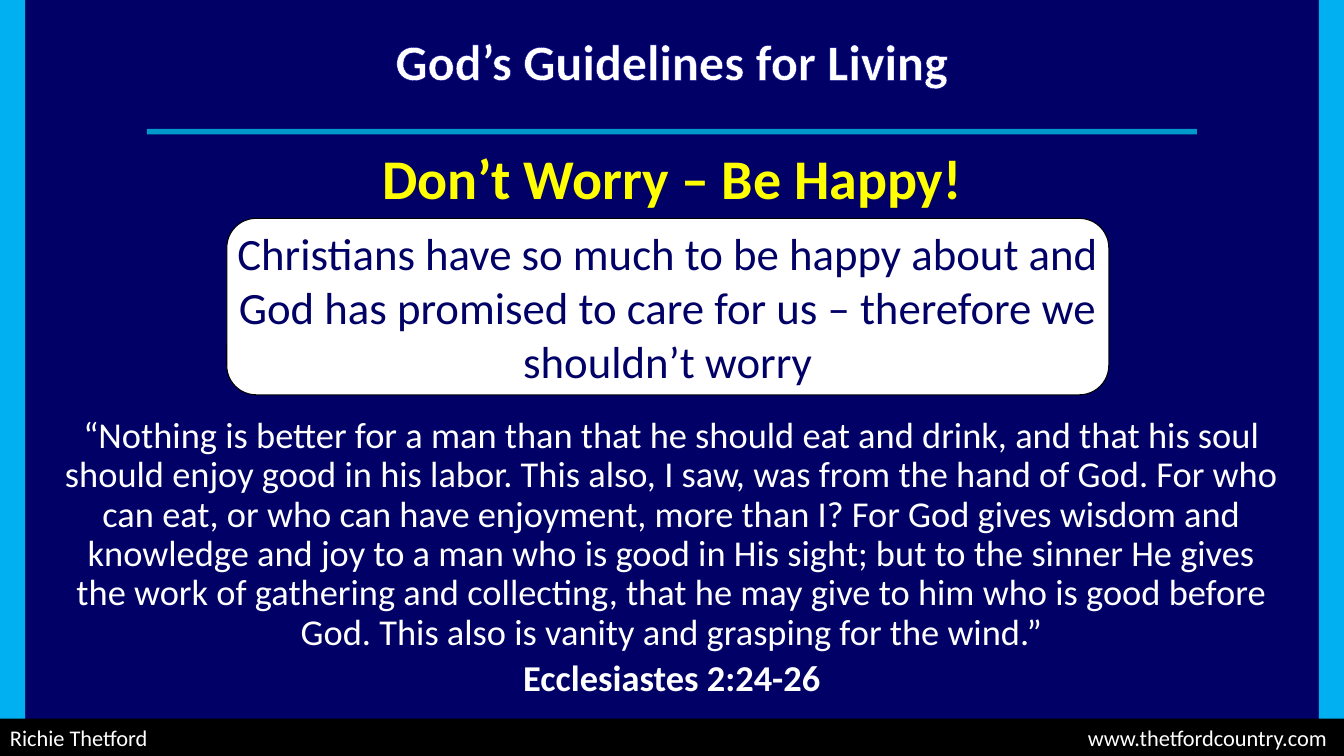
from dataclasses import dataclass

import lxml.etree
import pptx
import pptx.dml.color
import pptx.enum.shapes
import pptx.enum.text
import pptx.oxml.ns
import pptx.util

Pt = pptx.util.Pt
Align = pptx.enum.text.PP_ALIGN
Anchor = pptx.enum.text.MSO_ANCHOR
Preset = pptx.enum.shapes.MSO_SHAPE
qn = pptx.oxml.ns.qn


@dataclass(frozen=True)
class Theme:
    font: str = "Calibri"
    navy: str = "000066"
    outline: str = "000099"
    sky: str = "00B0F0"
    rule: str = "0099CC"
    yellow: str = "FFFF00"
    white: str = "FFFFFF"
    black: str = "000000"
    heading: float = 36
    topic: float = 40
    message: float = 32
    verse: float = 26
    footer: float = 16


@dataclass(frozen=True)
class Box:
    left: float
    top: float
    width: float
    height: float

    def lengths(self) -> tuple:
        return Pt(self.left), Pt(self.top), Pt(self.width), Pt(self.height)


@dataclass(frozen=True)
class Panel:
    box: Box
    fill: str


THEME = Theme()
WIDTH, HEIGHT = 960, 540
SIDE = 18
FOOTER_HEIGHT = 26.6
FOOTER_TAB = 940.8


def rgb(value: str) -> pptx.dml.color.RGBColor:
    return pptx.dml.color.RGBColor.from_string(value)


def add_panel(slide, panel: Panel, preset=Preset.RECTANGLE, line: str = ""):
    shape = slide.shapes.add_shape(preset, *panel.box.lengths())
    shape.shadow.inherit = False
    shape.fill.solid()
    shape.fill.fore_color.rgb = rgb(panel.fill)
    if line:
        shape.line.color.rgb = rgb(line)
        shape.line.width = Pt(0.75)
    else:
        shape.line.fill.background()
    return shape


def add_frame(slide, box: Box):
    return slide.shapes.add_textbox(*box.lengths()).text_frame


def write(frame, *texts: str, size: float, color: str, bold: tuple = (False,),
          align=Align.CENTER, anchor=Anchor.TOP, spacing: float = 1.0,
          gap: float = 0, outline: str = "", right_tab: float = 0) -> None:
    frame.word_wrap = True
    frame.vertical_anchor = anchor
    for index, text in enumerate(texts):
        paragraph = frame.add_paragraph() if index else frame.paragraphs[0]
        paragraph.alignment = align
        paragraph.line_spacing = spacing
        paragraph.space_before = Pt(gap if index else 0)
        if right_tab:
            stops = lxml.etree.SubElement(paragraph._p.get_or_add_pPr(), qn("a:tabLst"))
            lxml.etree.SubElement(stops, qn("a:tab"), pos=str(Pt(right_tab)), algn="r")
        run = paragraph.add_run()
        run.text = text
        run.font.name = THEME.font
        run.font.size = Pt(size)
        run.font.bold = bold[index]
        run.font.color.rgb = rgb(color)
        if outline:
            edge = lxml.etree.Element(qn("a:ln"), w=str(Pt(1)))
            fill = lxml.etree.SubElement(edge, qn("a:solidFill"))
            lxml.etree.SubElement(fill, qn("a:srgbClr"), val=outline)
            run._r.get_or_add_rPr().insert(0, edge)


def main() -> None:
    presentation = pptx.Presentation()
    presentation.slide_width, presentation.slide_height = Pt(WIDTH), Pt(HEIGHT)
    slide = presentation.slides.add_slide(presentation.slide_layouts[6])
    slide.background.fill.solid()
    slide.background.fill.fore_color.rgb = rgb(THEME.navy)

    for panel in (
        Panel(Box(0, 0, SIDE, HEIGHT), THEME.sky),
        Panel(Box(WIDTH - SIDE, 0, SIDE, HEIGHT), THEME.sky),
        Panel(Box(105, 92, 750, 4), THEME.rule),
    ):
        add_panel(slide, panel)

    write(add_frame(slide, Box(126, 0, 708, 86)), "God’s Guidelines for Living",
          size=THEME.heading, color=THEME.white, bold=(True,),
          anchor=Anchor.MIDDLE, outline=THEME.outline)
    write(add_frame(slide, Box(144, 96, 672, 61)), "Don’t Worry – Be Happy!",
          size=THEME.topic, color=THEME.yellow, bold=(True,), anchor=Anchor.MIDDLE)

    message = add_panel(slide, Panel(Box(162, 156, 630, 126), THEME.white),
                        Preset.ROUNDED_RECTANGLE, THEME.black)
    message.text_frame.margin_left = message.text_frame.margin_right = Pt(1)
    message.text_frame.margin_top = message.text_frame.margin_bottom = 0
    write(message.text_frame,
          "Christians have so much to be happy about and God has promised to care "
          "for us – therefore we shouldn’t worry",
          size=THEME.message, color=THEME.navy, anchor=Anchor.MIDDLE)

    write(add_frame(slide, Box(36, 294.5, 888, 215)),
          "“Nothing is better for a man than that he should eat and drink, and that "
          "his soul should enjoy good in his labor. This also, I saw, was from the "
          "hand of God. For who can eat, or who can have enjoyment, more than I? For "
          "God gives wisdom and knowledge and joy to a man who is good in His sight; "
          "but to the sinner He gives the work of gathering and collecting, that he "
          "may give to him who is good before God. This also is vanity and grasping "
          "for the wind.”",
          "Ecclesiastes 2:24-26",
          size=THEME.verse, color=THEME.white, bold=(False, True), spacing=0.9, gap=5.2)

    footer = add_panel(
        slide, Panel(Box(0, HEIGHT - FOOTER_HEIGHT, WIDTH, FOOTER_HEIGHT), THEME.black))
    write(footer.text_frame, "Richie Thetford\twww.thetfordcountry.com",
          size=THEME.footer, color=THEME.white, align=Align.LEFT, right_tab=FOOTER_TAB)

    presentation.save("out.pptx")


if __name__ == "__main__":
    main()
